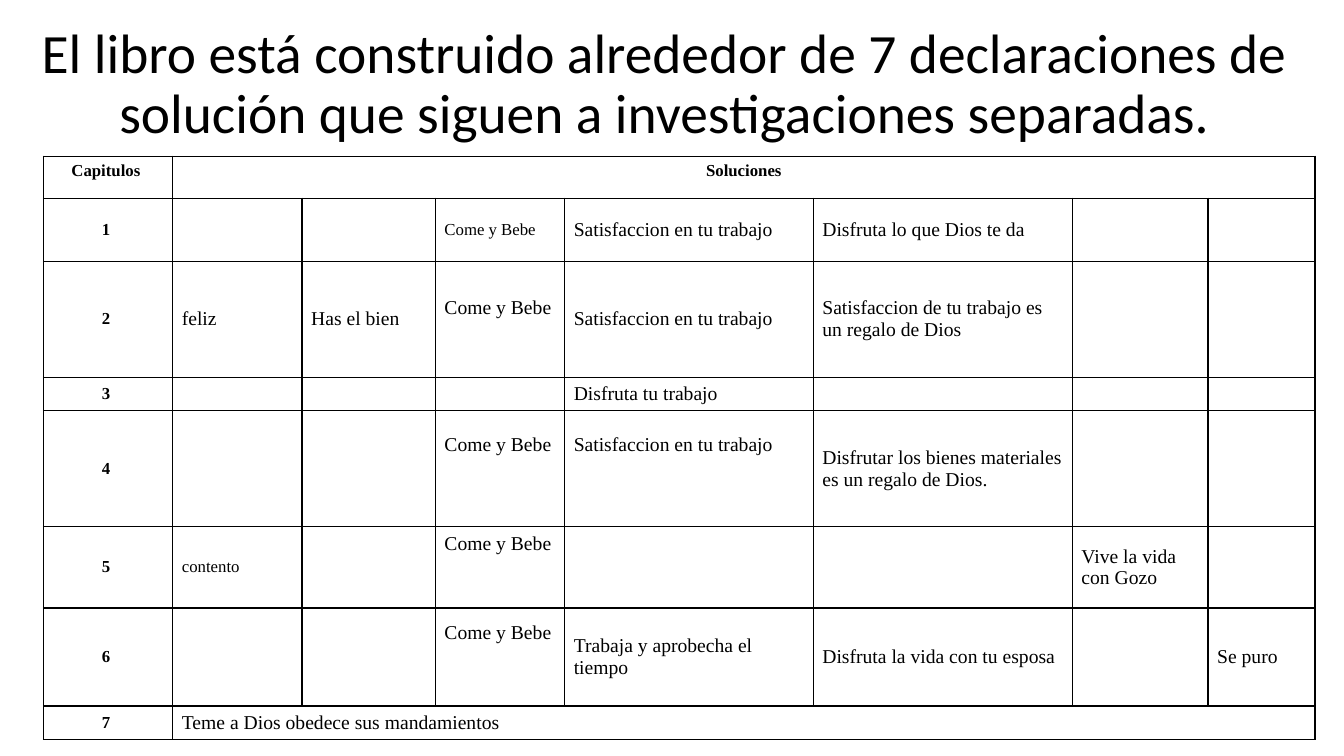
from lxml import etree
from pptx import Presentation
from pptx.dml.color import RGBColor
from pptx.enum.text import MSO_ANCHOR, PP_ALIGN
from pptx.oxml.ns import qn
from pptx.util import Pt

TOP, MIDDLE = MSO_ANCHOR.TOP, MSO_ANCHOR.MIDDLE
LEFT, CENTER = PP_ALIGN.LEFT, PP_ALIGN.CENTER

COLUMN_WIDTHS = [92.4, 92.4, 95.2, 92.4, 177.6, 185, 97, 76.4]
ROW_HEIGHTS = [30, 45, 82.8, 22.1, 82.8, 57.9, 70, 22.1]
EAT, WORK = "Come y Bebe", "Satisfaccion en tu trabajo"
CHAPTERS = [
    ["Capitulos ", "Soluciones", "", "", "", "", "", ""],
    ["1 ", "", "", EAT, WORK, "Disfruta lo que Dios te da", "", ""],
    ["2 ", "feliz ", "Has el bien ", EAT, WORK,
     "Satisfaccion de tu trabajo es un regalo de Dios", "", ""],
    ["3 ", "", "", "", "Disfruta tu trabajo", "", "", ""],
    ["4 ", "", "", EAT, WORK,
     "Disfrutar los bienes materiales es un regalo de Dios.", "", ""],
    ["5 ", "contento", "", EAT, "", "", "Vive la vida con Gozo", ""],
    ["6 ", "", "", EAT, "Trabaja y aprobecha el tiempo",
     "Disfruta la vida con tu esposa", "", "Se puro"],
    ["7 ", "Teme a Dios obedece sus mandamientos", "", "", "", "", "", ""],
]
FULL_WIDTH_ROWS = (0, 7)
SMALL_SOLUTIONS = {(1, 3), (5, 1)}
RAISED = {(2, 3): 16, (4, 3): 34, (4, 4): 34, (5, 3): 34, (6, 3): 34}


def color(value):
    return RGBColor.from_string(value)


class SlideBuilder:
    title_font = "Calibri"
    table_font = "Times New Roman"
    ink = "000000"
    paper = "FFFFFF"

    def __init__(self, slide):
        self.slide = slide

    def style(self, paragraph, font, size, bold=False, align=LEFT):
        paragraph.alignment = align
        paragraph.font.name = font
        paragraph.font.size = Pt(size)
        paragraph.font.bold = bold
        paragraph.font.color.rgb = color(self.ink)

    def title(self, text, left, top, width, height):
        frame = self.slide.shapes.add_textbox(
            Pt(left), Pt(top), Pt(width), Pt(height)).text_frame
        frame.word_wrap = True
        frame.vertical_anchor = MIDDLE
        heading = frame.paragraphs[0]
        heading.text = text
        heading.line_spacing = 0.9
        self.style(heading, self.title_font, 39.6, align=CENTER)

    def border(self, cell):
        properties = cell._tc.get_or_add_tcPr()
        for position, side in enumerate(("a:lnL", "a:lnR", "a:lnT", "a:lnB")):
            line = etree.Element(qn(side), w=str(Pt(1)))
            fill = etree.SubElement(line, qn("a:solidFill"))
            etree.SubElement(fill, qn("a:srgbClr"), val=self.ink)
            properties.insert(position, line)

    def cell(self, cell, text, size, bold, align, anchor, lift):
        cell.fill.solid()
        cell.fill.fore_color.rgb = color(self.paper)
        cell.margin_left = cell.margin_right = Pt(6.5)
        cell.margin_top = Pt(3.6)
        cell.margin_bottom = Pt(3.6 + lift)
        cell.vertical_anchor = anchor
        paragraph = cell.text_frame.paragraphs[0]
        self.style(paragraph, self.table_font, size, bold, align)
        if text:
            paragraph.text = text
        else:
            etree.SubElement(paragraph._p, qn("a:endParaRPr"), sz=str(size * 100))
        self.border(cell)

    def table(self, rows, left, top):
        table = self.slide.shapes.add_table(
            len(rows), len(COLUMN_WIDTHS), Pt(left), Pt(top),
            Pt(sum(COLUMN_WIDTHS)), Pt(sum(ROW_HEIGHTS))).table
        table.first_row = table.horz_banding = False
        for column, width in zip(table.columns, COLUMN_WIDTHS):
            column.width = Pt(width)
        for r, texts in enumerate(rows):
            table.rows[r].height = Pt(ROW_HEIGHTS[r])
            for c, text in enumerate(texts):
                heading = r == 0 or c == 0
                small = heading or not text or (r, c) in SMALL_SOLUTIONS
                self.cell(table.cell(r, c), text, 12 if small else 14, heading,
                          CENTER if heading else LEFT,
                          TOP if r == 0 else MIDDLE, RAISED.get((r, c), 0))
        for r in FULL_WIDTH_ROWS:
            table.cell(r, 1).merge(table.cell(r, len(COLUMN_WIDTHS) - 1))


def main():
    presentation = Presentation()
    presentation.slide_width, presentation.slide_height = Pt(960), Pt(540)
    builder = SlideBuilder(presentation.slides.add_slide(presentation.slide_layouts[6]))
    builder.title("El libro está construido alrededor de 7 declaraciones de "
                  "solución que siguen a investigaciones separadas.",
                  20.2, 8.6, 908.6, 104.4)
    builder.table(CHAPTERS, 31, 111.6)
    presentation.save("out.pptx")


if __name__ == "__main__":
    main()
